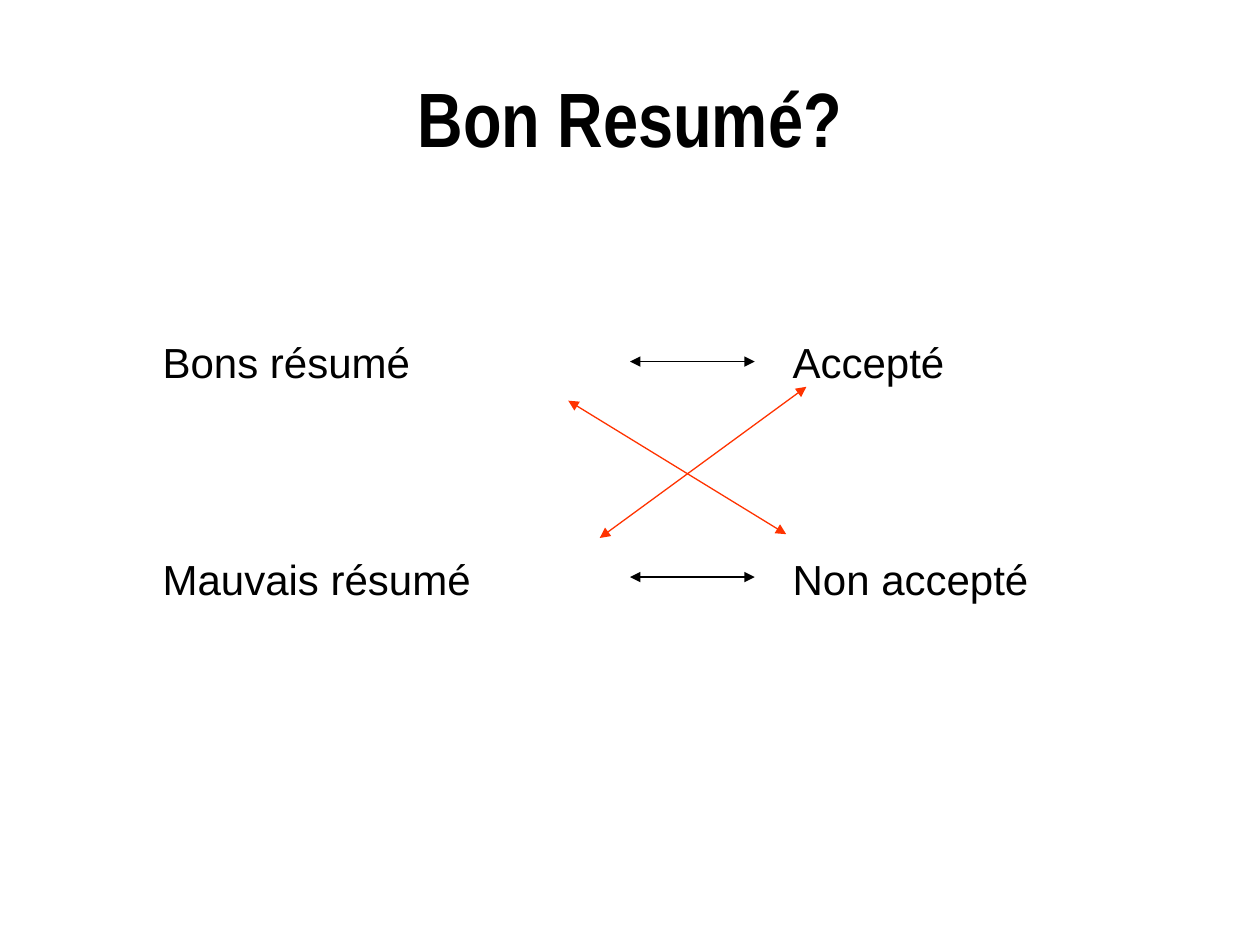
"""Build a slide that pairs good and bad summaries with acceptance, crossed by the wrong pairings."""
from dataclasses import dataclass

from lxml import etree
from pptx import Presentation
from pptx.dml.color import RGBColor
from pptx.enum.shapes import MSO_CONNECTOR
from pptx.enum.text import MSO_ANCHOR, PP_ALIGN
from pptx.oxml.ns import qn
from pptx.slide import Slide
from pptx.util import Inches, Pt

STRAIGHT = MSO_CONNECTOR.STRAIGHT
TOP, MIDDLE = MSO_ANCHOR.TOP, MSO_ANCHOR.MIDDLE
LEFT, CENTER = PP_ALIGN.LEFT, PP_ALIGN.CENTER
BLACK = RGBColor(0x00, 0x00, 0x00)
RED = RGBColor(0xFF, 0x33, 0x00)
BLANK_LAYOUT = 6
CELL = Inches(0.1)
COLUMNS, ROWS = 100, 75
OUTCOME_TAB = 50
PAIR_GAP = Pt(95)


@dataclass(frozen=True)
class TextBlock:
    lines: tuple[str, ...]
    left: float
    top: float
    width: float
    height: float
    font: dict
    frame: dict
    alignment: PP_ALIGN


@dataclass(frozen=True)
class Arrow:
    start: tuple[float, float]
    end: tuple[float, float]
    color: RGBColor
    width: float


TEXT_BLOCKS = (
    TextBlock(
        ("Bon Resumé?",), 5, 3, 90, 12.5,
        {"name": "Arial Narrow", "size": Pt(44), "bold": True},
        {"vertical_anchor": MIDDLE},
        CENTER,
    ),
    TextBlock(
        ("Bons résumé\tAccepté", "Mauvais résumé\tNon accepté"), 12.2, 26.3, 70.8, 23,
        {"name": "Arial", "size": Pt(24)},
        {
            "vertical_anchor": TOP,
            "margin_left": Inches(0.07),
            "margin_right": Inches(0.07),
            "margin_top": Inches(0.04),
            "margin_bottom": Inches(0.04),
        },
        LEFT,
    ),
)

ARROWS = (
    *(Arrow((50, row), (59.9, row), BLACK, 1) for row in (28.7, 45.8)),
    Arrow((47.6, 42.7), (64, 30.7), RED, 0.75),
    Arrow((62.4, 42.4), (45.1, 31.8), RED, 0.75),
)


def grid(*cells: float) -> list[int]:
    """Turn grid positions into lengths."""
    return [round(cell * CELL) for cell in cells]


def set_attributes(target: object, values: dict) -> None:
    """Set every attribute named in the values."""
    for name, value in values.items():
        setattr(target, name, value)


def add_tab_stop(paragraph, position: int) -> None:
    """Give the paragraph one left tab stop."""
    tab_list = etree.SubElement(paragraph._p.get_or_add_pPr(), qn("a:tabLst"))
    etree.SubElement(tab_list, qn("a:tab"), pos=str(position), algn="l")


def draw_text(slide: Slide, block: TextBlock) -> None:
    """Draw one text block, a paragraph for each line."""
    shape = slide.shapes.add_textbox(*grid(block.left, block.top, block.width, block.height))
    frame = shape.text_frame
    set_attributes(frame, {"word_wrap": True, **block.frame})
    for index, line in enumerate(block.lines):
        paragraph = frame.add_paragraph() if index else frame.paragraphs[0]
        paragraph.alignment = block.alignment
        paragraph.space_before = PAIR_GAP if index else Pt(0)
        if "\t" in line:
            add_tab_stop(paragraph, *grid(OUTCOME_TAB))
        run = paragraph.add_run()
        run.text = line
        set_attributes(run.font, block.font)
        run.font.color.rgb = BLACK


def draw_arrow(slide: Slide, arrow: Arrow) -> None:
    """Draw a straight line with a triangle at both ends."""
    connector = slide.shapes.add_connector(STRAIGHT, *grid(*arrow.start, *arrow.end))
    connector.line.color.rgb = arrow.color
    connector.line.width = Pt(arrow.width)
    line_element = connector.line._get_or_add_ln()
    for end in ("a:headEnd", "a:tailEnd"):
        etree.SubElement(line_element, qn(end), type="triangle")
    etree.SubElement(connector._element.spPr, qn("a:effectLst"))


def main() -> None:
    """Build and save the slide."""
    presentation = Presentation()
    presentation.slide_width, presentation.slide_height = grid(COLUMNS, ROWS)
    slide = presentation.slides.add_slide(presentation.slide_layouts[BLANK_LAYOUT])
    for block in TEXT_BLOCKS:
        draw_text(slide, block)
    for arrow in ARROWS:
        draw_arrow(slide, arrow)
    presentation.save("out.pptx")


if __name__ == "__main__":
    main()
